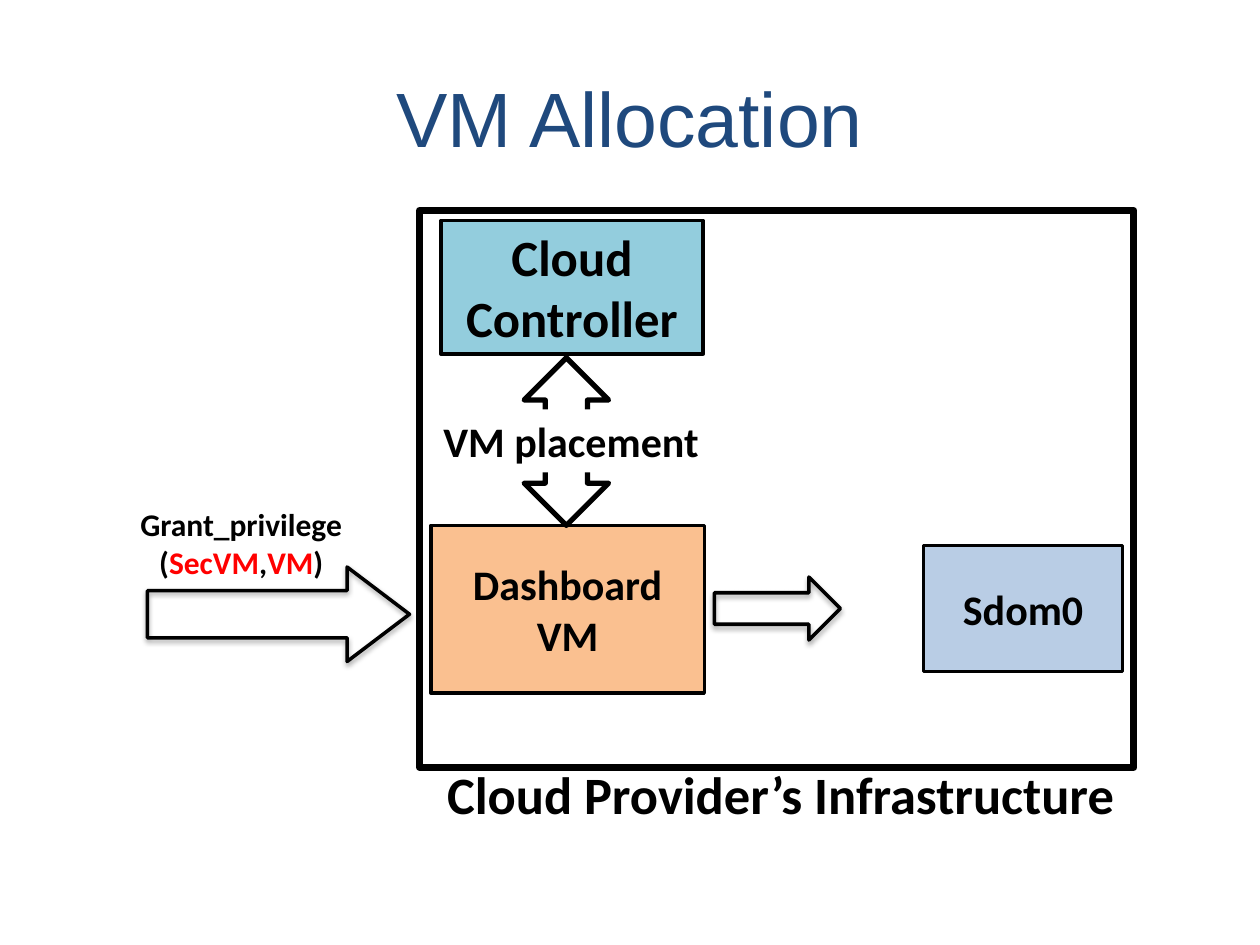
from lxml import etree
from pptx import Presentation
from pptx.dml.color import RGBColor
from pptx.enum.shapes import MSO_SHAPE
from pptx.enum.text import MSO_ANCHOR, MSO_AUTO_SIZE, PP_ALIGN
from pptx.oxml.ns import qn
from pptx.util import Inches, Pt

RECT = MSO_SHAPE.RECTANGLE
RIGHT = MSO_SHAPE.RIGHT_ARROW
DOUBLE = MSO_SHAPE.LEFT_RIGHT_ARROW
MIDDLE, BOTTOM, TOP = MSO_ANCHOR.MIDDLE, MSO_ANCHOR.BOTTOM, MSO_ANCHOR.TOP
CENTER, LEFT = PP_ALIGN.CENTER, PP_ALIGN.LEFT
FIT = MSO_AUTO_SIZE.SHAPE_TO_FIT_TEXT

BLACK = RGBColor(0x00, 0x00, 0x00)
WHITE = RGBColor(0xFF, 0xFF, 0xFF)
RED = RGBColor(0xFF, 0x00, 0x00)
NAVY = RGBColor(0x1F, 0x49, 0x7D)
ORANGE = RGBColor(0xFA, 0xC0, 0x90)
TEAL = RGBColor(0x93, 0xCD, 0xDD)
PALE_BLUE = RGBColor(0xB9, 0xCD, 0xE5)

# Content, back to front; text is a list of lines, a line is a list of (text, colour)
TITLE = "VM Allocation"
PARTS = [
    # Provider boundary and its boxes
    dict(box=(3.33, 1.67, 5.67, 4.42), shape=RECT, line=4),
    dict(box=(3.42, 4.17, 2.17, 1.33), shape=RECT, fill=ORANGE, line=2,
         text=[[("Dashboard", BLACK)], [("VM", BLACK)]], size=24),
    dict(box=(3.5, 1.75, 2.08, 1.06), shape=RECT, fill=TEAL, line=2,
         text=[[("Cloud", BLACK)], [("Controller", BLACK)]], size=29, anchor=BOTTOM),
    dict(box=(3.45, 6, 5.55, 0.61), size=30, align=LEFT,
         text=[[("Cloud Provider’s Infrastructure", BLACK)]]),
    # Arrows and labels
    dict(box=(3.83, 3.17, 1.33, 0.67), shape=DOUBLE, line=3, rotation=90),
    dict(box=(1.17, 4.5, 2.08, 0.75), shape=RIGHT, line=2, adj=(0.5, 0.66), shadow=True),
    dict(box=(3.42, 3.25, 2.25, 0.5), shape=RECT, fill=WHITE, size=24, align=LEFT,
         text=[[("VM placement", BLACK)]], fit=True),
    dict(box=(7.33, 4.33, 1.58, 1), shape=RECT, fill=PALE_BLUE, line=2,
         text=[[("Sdom0", BLACK)]], size=24),
    dict(box=(5.67, 4.58, 1, 0.5), shape=RIGHT, line=2, shadow=True),
    dict(box=(1, 3.96, 1.83, 0.71), size=18,
         text=[[("Grant_privilege", BLACK)],
               [("(", BLACK), ("SecVM", RED), (",", BLACK), ("VM", RED), (")", BLACK)]]),
]


def set_font(r, **formats):
    color = formats.pop("color")
    for name, value in formats.items():
        setattr(r.font, name, value)
    r.font.color.rgb = color


def write_text(sp, part, fit):
    tf = sp.text_frame
    formats = dict(word_wrap=not fit,
                   vertical_anchor=TOP if fit else part.get("anchor", MIDDLE))
    if fit:
        formats["auto_size"] = FIT
    for name, value in formats.items():
        setattr(tf, name, value)
    for i, line in enumerate(part["text"]):
        p = tf.add_paragraph() if i else tf.paragraphs[0]
        p.alignment = part.get("align", CENTER)
        for text, color in line:
            r = p.add_run()
            r.text = text
            set_font(r, name="Calibri", size=Pt(part["size"]), bold=True, color=color)


def add_shadow(sp):
    effects = sp._element.spPr.find(qn("a:effectLst"))
    shadow = etree.SubElement(effects, qn("a:outerShdw"), blurRad=str(Pt(3.1)),
                              dist=str(Pt(1.8)), dir="5400000", rotWithShape="0")
    color = etree.SubElement(shadow, qn("a:srgbClr"), val=str(BLACK))
    etree.SubElement(color, qn("a:alpha"), val="35000")


def style_shape(sp, part):
    sp.shadow.inherit = False
    sp.rotation = part.get("rotation", 0)
    for i, value in enumerate(part.get("adj", ())):
        sp.adjustments[i] = value
    if "fill" in part:
        sp.fill.solid()
        sp.fill.fore_color.rgb = part["fill"]
    else:
        sp.fill.background()
    if "line" in part:
        sp.line.color.rgb = BLACK
        sp.line.width = Pt(part["line"])
    else:
        sp.line.fill.background()
    if part.get("shadow"):
        add_shadow(sp)


def add_part(s, part):
    box = [Inches(v) for v in part["box"]]
    if "shape" in part:
        sp = s.shapes.add_shape(part["shape"], *box)
        style_shape(sp, part)
    else:
        sp = s.shapes.add_textbox(*box)
    if "text" in part:
        write_text(sp, part, part.get("fit", "shape" not in part))


def main():
    prs = Presentation()
    prs.slide_width, prs.slide_height = Inches(10), Inches(7.5)
    s = prs.slides.add_slide(prs.slide_layouts[5])

    # Title
    title = s.shapes.title
    title.left, title.top, title.width, title.height = (
        Inches(v) for v in (0.5, 0.3, 9, 1.25))
    title.text_frame.vertical_anchor = MIDDLE
    p = title.text_frame.paragraphs[0]
    p.alignment = CENTER
    r = p.add_run()
    r.text = TITLE
    set_font(r, name="Arial", size=Pt(44), color=NAVY)

    # Diagram
    for part in PARTS:
        add_part(s, part)
    prs.save("out.pptx")


if __name__ == "__main__":
    main()
